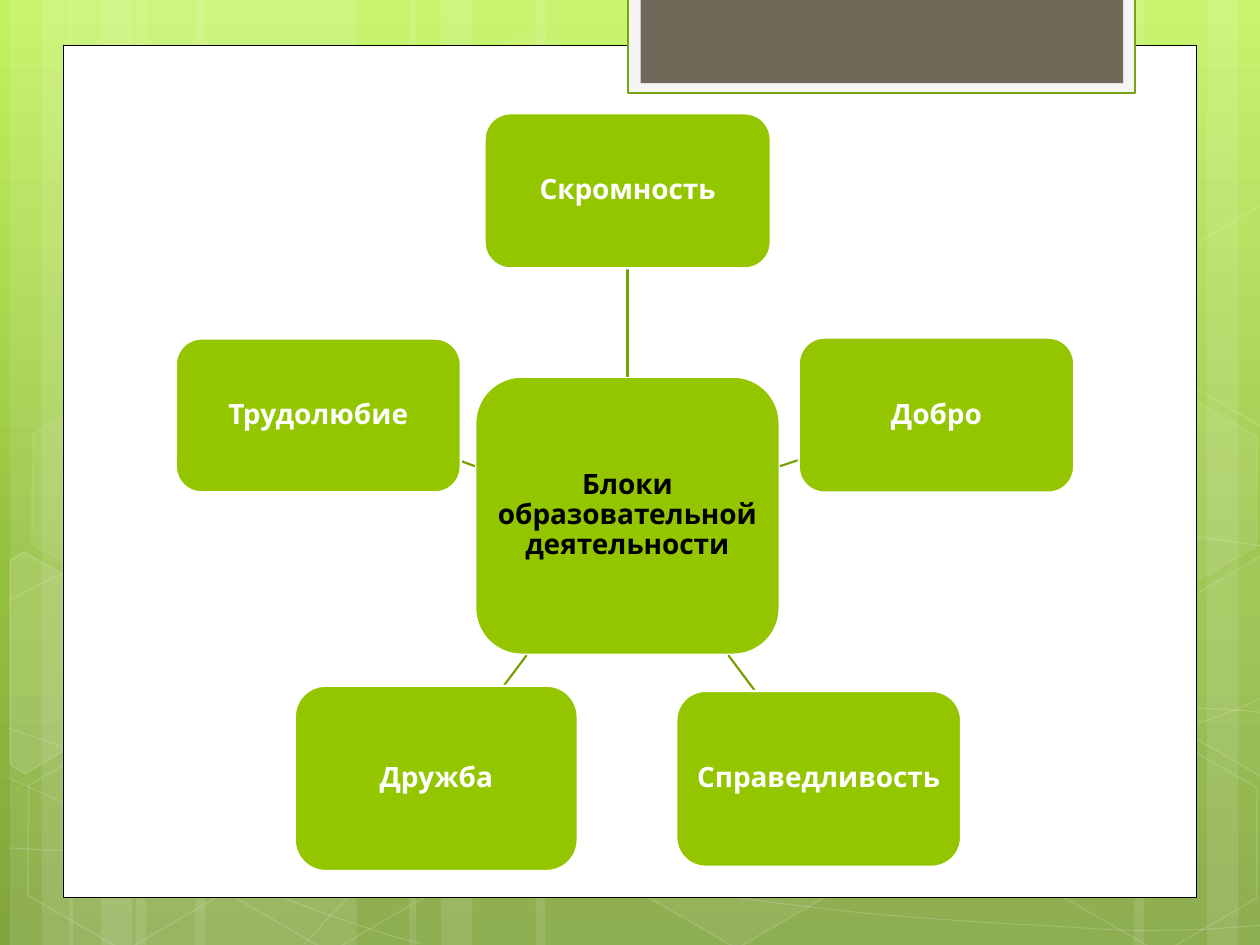
"""Build a slide with a hub and five linked blocks on a green backdrop."""
from dataclasses import dataclass
from typing import Optional

import lxml.etree
import pptx
import pptx.dml.color
import pptx.enum.shapes
import pptx.enum.text
import pptx.oxml.ns
import pptx.util

COLS, ROWS = 100, 75
CELL = pptx.util.Inches(10) // COLS
KIND = pptx.enum.shapes.MSO_SHAPE
WHITE, BLACK, GREEN, STEM = "FFFFFF", "000000", "94C600", "779F00"


@dataclass(frozen=True)
class Look:
    """Fill and edge of a shape, with opacity in percent."""
    fill: Optional[str] = None
    fade: int = 100
    edge: Optional[str] = None
    width: float = 1
    dim: int = 100


@dataclass(frozen=True)
class Box:
    """A place on the grid in columns and rows."""
    left: float
    top: float
    width: float
    height: float


@dataclass(frozen=True)
class Node:
    """A block with its words and the ends of its link to the hub."""
    words: str
    box: Box
    link: Optional[tuple] = None
    ink: str = WHITE


def wisp(fade: int = 0, dim: int = 12) -> Look:
    """Give the look of a faint white hexagon."""
    return Look(WHITE if fade else None, fade, WHITE, 1, dim)


STRIPES = [(10.8, 17.5), (0.8, 5), (3.3, 8.3), (15.5, 17.5), (5.5, 5), (8, 8.3),
           (73.3, 17.5), (95.8, 5), (90, 8.3), (42.5, 30.8), (32.5, 5), (35, 8.3)]

CURVES = [
    [(0.7, 67.3), (6.1, 67.6), (11.5, 67.9), (19, 67.8), (26.5, 67.7), (35.8, 67.5),
     (45.8, 66.5), (55.8, 65.5), (70, 63.6), (79.2, 61.7), (88.3, 59.8), (97.7, 56.8),
     (100.7, 55.1)],
    [(0.7, 47.7), (3.6, 46.1), (6.5, 44.6), (12.1, 43.1), (17.8, 41.6), (25.9, 39.4),
     (34.7, 38.7), (43.6, 38), (54.4, 37.9), (65.4, 38.7), (76.4, 39.5), (94.7, 42.6),
     (100.7, 43.4)],
    [(0.6, 61.7), (12.7, 67.2), (24.7, 72.7), (33.4, 74.9)],
    [(0.7, 57.8), (3.8, 58.9), (7, 60), (12.8, 61.6), (18.6, 63.1), (27.3, 65.6),
     (35.7, 67.3), (44, 69), (54.5, 70.8), (62.8, 71.8), (71.1, 72.9), (80, 73.3),
     (85.3, 73.6), (90.5, 74), (91.9, 73.8), (94.5, 73.8), (97.1, 73.7), (98.9, 73.5),
     (100.7, 73.4)],
    [(24.2, 74.9), (26, 72.9), (27.8, 70.9), (30.2, 69.1), (32.6, 67.3), (36, 65.3),
     (38.8, 63.9), (41.6, 62.5), (43.3, 61.9), (47, 60.9), (50.6, 59.9), (57.3, 58.5),
     (60.8, 57.8), (64.4, 57.1), (64.9, 57.1), (68, 56.9), (71.1, 56.6), (76, 56.3),
     (79.4, 56.2), (82.9, 56.1), (88.6, 56.2), (88.6, 56.2), (90.8, 56.2), (93.1, 56.2),
     (95.3, 56.2), (97.1, 56.3), (98.8, 56.4), (99.7, 56.5), (100.6, 56.6), (100.3, 56.5),
     (100.6, 56.6)],
]

HEXES = [(33.4, 3.6, wisp(4, 8)), (49.7, 58.9, wisp(6)), (1.1, 59.1, wisp()),
         (1.4, 31.2, wisp(7, 8)), (17.4, 59.2, wisp()), (83.4, 59.3, wisp()),
         (83.4, 31.4, wisp(7, 8))]

SHARDS = [
    ([(0.8, 44.5), (1.9, 43.8), (9.6, 48.2), (9.5, 57), (2, 61.4), (0.8, 60.7)], wisp(10)),
    ([(92.6, 48.5), (100.1, 44.1), (100.9, 44.6), (100.9, 61.3), (100.2, 61.7),
      (92.6, 57.3)], wisp(4)),
    ([(92.6, 20.7), (100.1, 16.3), (101, 16.8), (100.9, 33.5), (100.2, 33.9),
      (92.6, 29.5)], wisp()),
]

PANELS = [
    (Box(5, 3.6, 90, 67.65), Look(WHITE, edge=BLACK, width=0.5)),
    (Box(49.85, -0.2, 40.25, 7.6), Look("F5F5F5", edge="74A510", width=1.25)),
    (Box(50.85, -0.2, 38.3, 6.8), Look("71685A")),
]

NODES = [
    Node("Блоки образовательной деятельности", Box(37.73, 29.9, 24.15, 22.05), ink=BLACK),
    Node("Скромность", Box(38.47, 9, 22.7, 12.3), (49.8, 29.9, 49.8, 21.3)),
    Node("Добро", Box(63.4, 26.8, 21.85, 12.3), (61.9, 37, 63.4, 36.5)),
    Node("Справедливость", Box(53.68, 54.84, 22.6, 13.95), (57.8, 52, 59.9, 54.8)),
    Node("Дружба", Box(23.4, 54.43, 22.45, 14.7), (41.8, 52, 40, 54.4)),
    Node("Трудолюбие", Box(13.97, 26.87, 22.6, 12.2), (37.7, 37, 36.6, 36.6)),
]


def span(*cells: float) -> list:
    """Turn grid cells into lengths."""
    return [round(cell * CELL) for cell in cells]


def hue(text: str) -> pptx.dml.color.RGBColor:
    """Read a colour from a hex string."""
    return pptx.dml.color.RGBColor.from_string(text)


def tint(shape, fill, color: Optional[str], part: str, share: int) -> None:
    """Set one fill of a shape and its opacity."""
    if color is None:
        fill.background()
        return
    fill.solid()
    fill.fore_color.rgb = hue(color)
    if share < 100:
        node = shape.element.spPr.xpath(part + "a:solidFill/a:srgbClr")[0]
        tag = pptx.oxml.ns.qn("a:alpha")
        lxml.etree.SubElement(node, tag).set("val", str(share * 1000))


def dress(shape, look: Look) -> None:
    """Give a shape its look without a shadow."""
    shape.shadow.inherit = False
    tint(shape, shape.fill, look.fill, "", look.fade)
    tint(shape, shape.line.fill, look.edge, "a:ln/", look.dim)
    if look.edge:
        shape.line.width = pptx.util.Pt(look.width)


def block(slide, kind, box: Box, look: Look):
    """Add a preset shape."""
    place = span(box.left, box.top, box.width, box.height)
    shape = slide.shapes.add_shape(kind, *place)
    dress(shape, look)
    return shape


def trace(slide, points: list, look: Look, close: bool):
    """Add an outline through the points."""
    spots = [span(*point) for point in points]
    pen = slide.shapes.build_freeform(*spots[0])
    pen.add_line_segments(spots[1:], close=close)
    shape = pen.convert_to_shape()
    dress(shape, look)
    return shape


def bend(shape) -> None:
    """Turn each three straight steps of an outline into one cubic curve."""
    steps = shape.element.xpath(".//a:lnTo")
    for first in range(0, len(steps), 3):
        curve = lxml.etree.Element(pptx.oxml.ns.qn("a:cubicBezTo"))
        steps[first].addprevious(curve)
        for step in steps[first:first + 3]:
            curve.append(step[0])
            step.getparent().remove(step)


def shade(slide, stops: list) -> None:
    """Fill the backdrop from top to bottom."""
    fill = slide.background.fill
    fill.gradient()
    fill.gradient_angle = 270
    chain = slide.element.xpath(".//p:bg//a:gsLst")[0]
    for old in list(chain):
        chain.remove(old)
    for place, color in stops:
        stop = lxml.etree.SubElement(chain, pptx.oxml.ns.qn("a:gs"), pos=str(place * 1000))
        lxml.etree.SubElement(stop, pptx.oxml.ns.qn("a:srgbClr"), val=color)


def join(slide, ends: tuple) -> None:
    """Draw a link between two blocks."""
    link = slide.shapes.add_connector(pptx.enum.shapes.MSO_CONNECTOR.STRAIGHT, *span(*ends))
    link.line.color.rgb = hue(STEM)
    link.line.width = pptx.util.Pt(1.25)
    lxml.etree.SubElement(link.element.spPr, pptx.oxml.ns.qn("a:effectLst"))


def label(slide, node: Node) -> None:
    """Draw a block with its words."""
    look = Look(GREEN, edge=WHITE, width=1.25)
    frame = block(slide, KIND.ROUNDED_RECTANGLE, node.box, look).text_frame
    frame.word_wrap = True
    frame.vertical_anchor = pptx.enum.text.MSO_ANCHOR.MIDDLE
    inset = pptx.util.Inches(0.04)
    frame.margin_left = frame.margin_right = frame.margin_top = frame.margin_bottom = inset
    line = frame.paragraphs[0]
    line.text = node.words
    line.alignment = pptx.enum.text.PP_ALIGN.CENTER
    line.line_spacing = 0.9
    line.font.name, line.font.size, line.font.bold = "Quicksand", pptx.util.Pt(16), True
    line.font.color.rgb = hue(node.ink)


def main() -> None:
    """Build and save the slide."""
    deck = pptx.Presentation()
    deck.slide_width, deck.slide_height = span(COLS, ROWS)
    slide = deck.slides.add_slide(deck.slide_layouts[6])
    shade(slide, [(0, "C3F35F"), (62, "93BF3F"), (100, "81A53E")])
    for left, width in STRIPES:
        block(slide, KIND.RECTANGLE, Box(left, 0, width, ROWS), Look(WHITE, 10))
    for knots in CURVES:
        bend(trace(slide, knots, Look(edge=WHITE, width=0.5, dim=20), False))
    for left, top, look in HEXES:
        cell = block(slide, KIND.HEXAGON, Box(left, top, 17.5, 15.2), look)
        cell.adjustments[0] = 0.285
        cell.rotation = 30
    for points, look in SHARDS:
        trace(slide, points, look, True)
    for box, look in PANELS:
        block(slide, KIND.RECTANGLE, box, look)
    for node in NODES:
        if node.link:
            join(slide, node.link)
        label(slide, node)
    deck.save("out.pptx")


if __name__ == "__main__":
    main()
